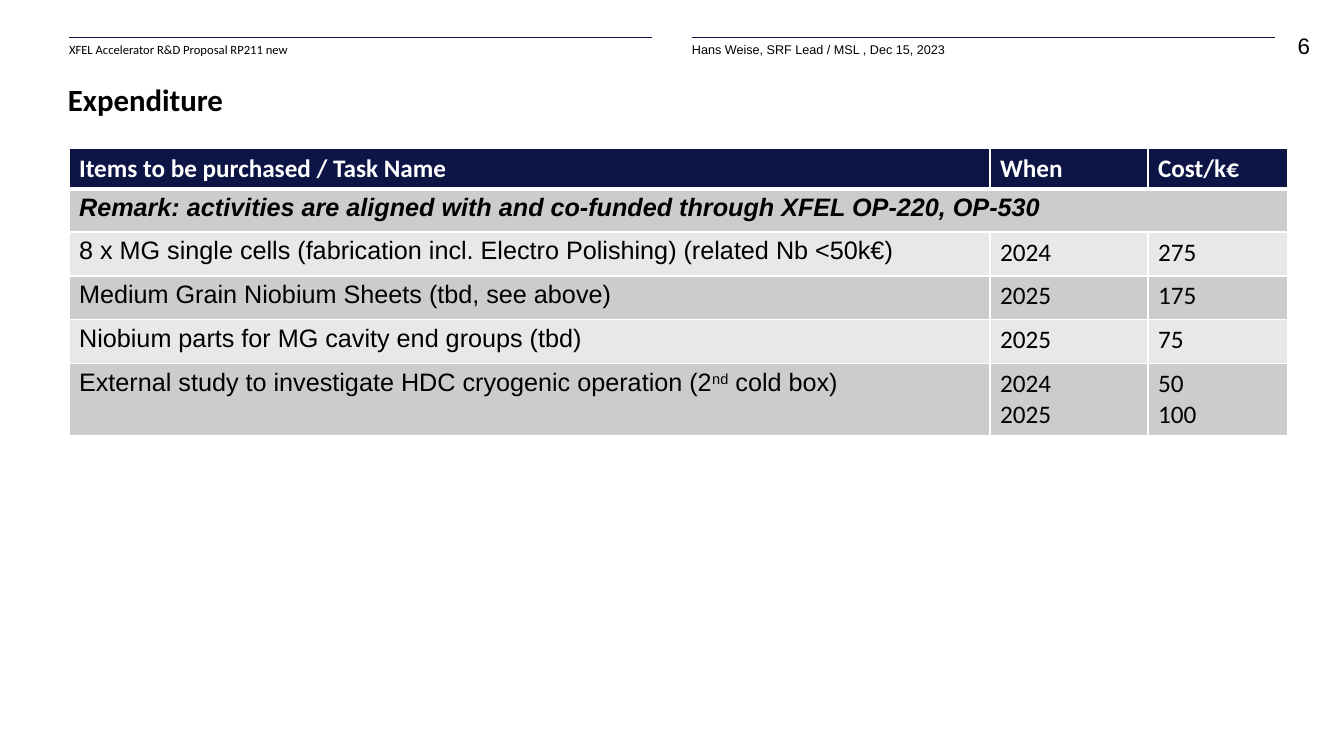
"""Build the expenditure slide with its header strip and cost table."""
import lxml.etree
import pptx
import pptx.dml.color
import pptx.enum.shapes
import pptx.enum.text
import pptx.oxml
import pptx.oxml.ns
import pptx.util

EMU_PER_PX = 914400 / 100.8
COLORS = {
    "white": "FFFFFF",
    "black": "000000",
    "navy": "0D1546",
    "dark_band": "CCCCCF",
    "light_band": "E7E8E9",
}
HEADER_COLUMNS = [
    (69, "XFEL Accelerator R&D Proposal RP211 new", "Calibri"),
    (692, "Hans Weise, SRF Lead / MSL , Dec 15, 2023", "Arial"),
]
HEADER_WIDTH = 583
TABLE_HEADINGS = ["Items to be purchased / Task Name", "When", "Cost/k€"]
REMARK = "Remark: activities are aligned with and co-funded through XFEL OP-220, OP-530"
EXPENDITURES = [
    ("8 x MG single cells (fabrication incl. Electro Polishing) (related Nb <50k€)", "2024", "275"),
    ("Medium Grain Niobium Sheets (tbd, see above)", "2025", "175"),
    ("Niobium parts for MG cavity end groups (tbd)", "2025", "75"),
    ("External study to investigate HDC cryogenic operation (2^nd^ cold box)", "2024\n2025", "50\n100"),
]
COLUMN_WIDTHS = [921, 158, 140]
ROW_HEIGHTS = [41, 43, 44, 44, 44, 71]


def px(length):
    return pptx.util.Emu(round(length * EMU_PER_PX))


def color(name):
    return pptx.dml.color.RGBColor.from_string(COLORS[name])


def format_runs(text_frame, font_name, size, color_name="black", bold=False, italic=False):
    for paragraph in text_frame.paragraphs:
        for run in paragraph.runs:
            run.font.name = font_name
            run.font.size = pptx.util.Pt(size)
            run.font.bold = bold
            run.font.italic = italic
            run.font.color.rgb = color(color_name)


def clear_margins(text_frame):
    text_frame.margin_left = text_frame.margin_right = 0
    text_frame.margin_top = text_frame.margin_bottom = 0
    text_frame.word_wrap = True
    text_frame.auto_size = pptx.enum.text.MSO_AUTO_SIZE.NONE


def add_label(slide, box, text, font_name, size, alignment=pptx.enum.text.PP_ALIGN.LEFT):
    text_frame = slide.shapes.add_textbox(*map(px, box)).text_frame
    clear_margins(text_frame)
    text_frame.text = text
    text_frame.paragraphs[0].alignment = alignment
    format_runs(text_frame, font_name, size)


def add_rule(slide, left, top, width):
    rule = slide.shapes.add_connector(
        pptx.enum.shapes.MSO_CONNECTOR.STRAIGHT, px(left), px(top), px(left + width), px(top)
    )
    rule.line.color.rgb = color("navy")
    rule.line.width = pptx.util.Pt(0.5)
    lxml.etree.SubElement(rule._element.spPr, pptx.oxml.ns.qn("a:effectLst"))


def set_title(slide, text):
    title = slide.shapes.title
    title.left, title.top, title.width, title.height = map(px, (68, 79, 1207, 39))
    text_frame = title.text_frame
    clear_margins(text_frame)
    text_frame.vertical_anchor = pptx.enum.text.MSO_ANCHOR.BOTTOM
    text_frame.text = text
    text_frame.paragraphs[0].alignment = pptx.enum.text.PP_ALIGN.LEFT
    format_runs(text_frame, "Calibri", 22, bold=True)


def set_borders(cell, top_width, bottom_width):
    properties = cell._tc.get_or_add_tcPr()
    for side, width in (("L", 1), ("R", 1), ("T", top_width), ("B", bottom_width)):
        properties.append(pptx.oxml.parse_xml(
            f'<a:ln{side} {pptx.oxml.ns.nsdecls("a")} w="{pptx.util.Pt(width)}">'
            f'<a:solidFill><a:srgbClr val="{COLORS["white"]}"/></a:solidFill></a:ln{side}>'
        ))


def write_superscripts(paragraph, marked_text):
    for index, part in enumerate(marked_text.split("^")):
        run = paragraph.add_run()
        run.text = part
        if index % 2:
            run._r.get_or_add_rPr().set("baseline", "30000")


def fill_cell(cell, text, row):
    set_borders(cell, 3 if row == 1 else 1, 3 if row == 0 else 1)
    cell.fill.solid()
    band = "dark_band" if row % 2 else "light_band"
    cell.fill.fore_color.rgb = color("navy" if row == 0 else band)
    if "^" in text:
        write_superscripts(cell.text_frame.paragraphs[0], text)
    else:
        cell.text_frame.text = text


def add_expenditure_table(slide):
    table = slide.shapes.add_table(
        len(ROW_HEIGHTS), len(COLUMN_WIDTHS), px(69), px(148),
        px(sum(COLUMN_WIDTHS)), px(sum(ROW_HEIGHTS)),
    ).table
    for column, width in zip(table.columns, COLUMN_WIDTHS):
        column.width = px(width)
    for table_row, height in zip(table.rows, ROW_HEIGHTS):
        table_row.height = px(height)
    for row, texts in enumerate([TABLE_HEADINGS, (REMARK, "", ""), *EXPENDITURES]):
        for column, text in enumerate(texts):
            cell = table.cell(row, column)
            fill_cell(cell, text, row)
            font_name = "Arial" if row and column == 0 else "Calibri"
            format_runs(cell.text_frame, font_name, 18, "black" if row else "white",
                        bold=row < 2, italic=row == 1)
    table.cell(1, 0).merge(table.cell(1, len(COLUMN_WIDTHS) - 1))


def main():
    presentation = pptx.Presentation()
    presentation.slide_width, presentation.slide_height = px(1344), px(756)
    slide = presentation.slides.add_slide(presentation.slide_layouts[5])
    add_label(slide, (1254, 32, 56, 32), "6", "Arial", 16, pptx.enum.text.PP_ALIGN.RIGHT)
    for left, text, font_name in HEADER_COLUMNS:
        add_rule(slide, left, 37, HEADER_WIDTH)
        add_label(slide, (left, 42, HEADER_WIDTH, 24), text, font_name, 9)
    set_title(slide, "Expenditure")
    add_expenditure_table(slide)
    presentation.save("out.pptx")


if __name__ == "__main__":
    main()
